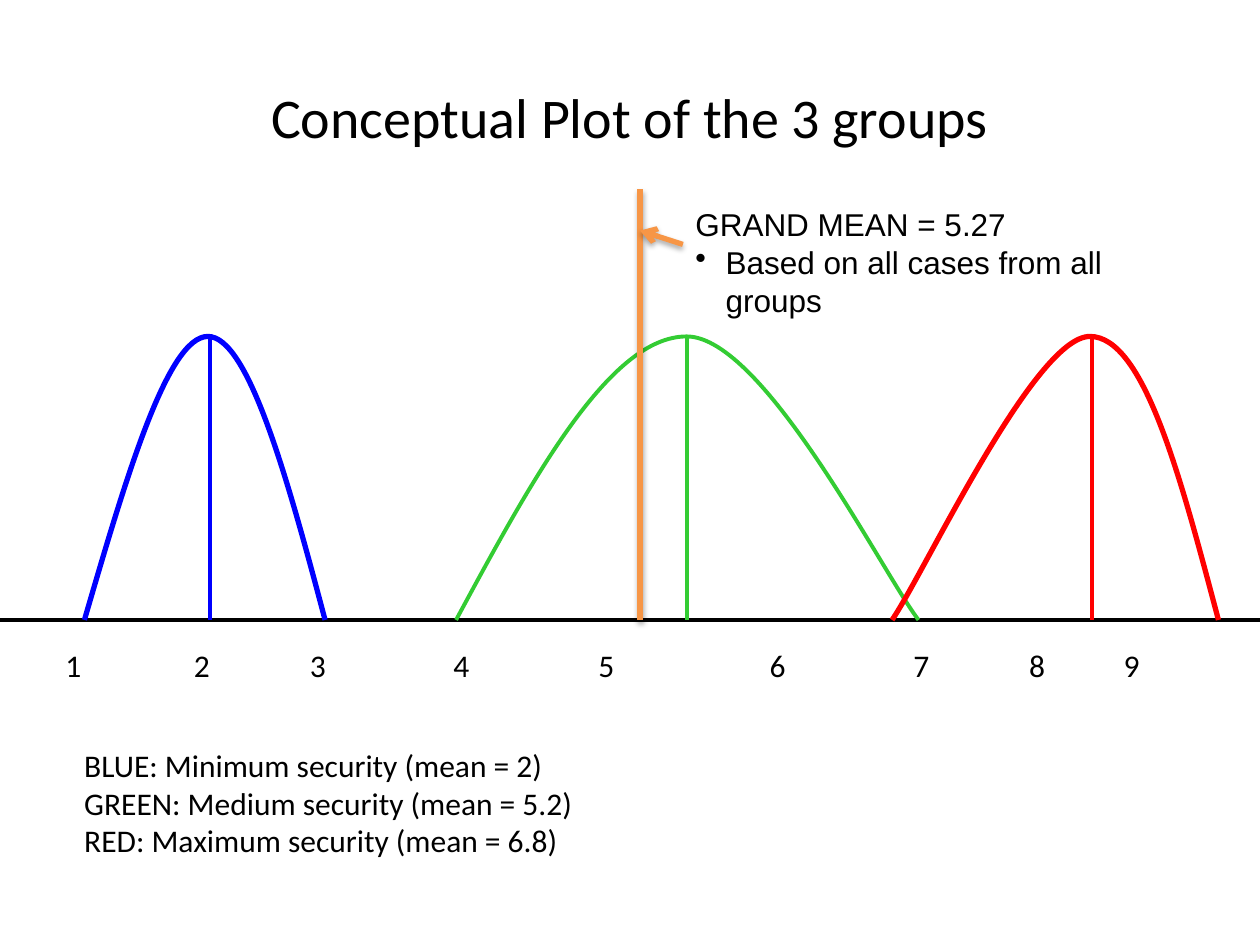
import lxml.etree
import pptx
import pptx.dml.color
import pptx.enum.shapes
import pptx.enum.text
import pptx.oxml
import pptx.oxml.ns
import pptx.util

Inches = pptx.util.Inches
Pt = pptx.util.Pt
qn = pptx.oxml.ns.qn
NAMESPACE = pptx.oxml.ns.nsdecls("a")

BASELINE, PEAK = 4.92, 2.67
BLUE, GREEN, RED, ORANGE, BLACK = "0000FF", "33CC33", "FF0000", "F79646", "000000"


def rgb(color):
    return pptx.dml.color.RGBColor.from_string(color)


def add_line(start, end, color, width):
    line = slide.shapes.add_connector(
        pptx.enum.shapes.MSO_CONNECTOR.STRAIGHT, *map(Inches, start + end))
    line.line.color.rgb = rgb(color)
    line.line.width = Pt(width)
    effects = lxml.etree.SubElement(line._element.spPr, qn("a:effectLst"))
    return line, effects


presentation = pptx.Presentation()
presentation.slide_width = Inches(10)
presentation.slide_height = Inches(7.5)
slide = presentation.slides.add_slide(presentation.slide_layouts[5])

title = slide.shapes.title
title.left, title.top, title.width, title.height = map(Inches, (0.5, 0.3, 9, 1.25))
title.text_frame.text = "Conceptual Plot of the 3 groups"
title.text_frame.vertical_anchor = pptx.enum.text.MSO_ANCHOR.MIDDLE
title_paragraph = title.text_frame.paragraphs[0]
title_paragraph.alignment = pptx.enum.text.PP_ALIGN.CENTER
title_paragraph.font.size = Pt(32)
title_paragraph.font.name = "Calibri"
title_paragraph.font.color.rgb = rgb(BLACK)

add_line((0, BASELINE), (10, BASELINE), BLACK, 2.25)
for mean, color in ((1.67, BLUE), (5.45, GREEN), (8.67, RED)):
    add_line((mean, BASELINE), (mean, PEAK), color, 2.25)

curves = [
    (GREEN, 2.25, (3.62, 4.23, 4.84, 5.45, 6.06, 7, 7.29), 4.54),
    (RED, 3, (9.67, 9.37, 9.08, 8.65, 8.21, 7.34, 7.08), 4.54),
    (BLUE, 3, (0.67, 1, 1.33, 1.65, 1.97, 2.28, 2.58), 3.79),
]
for color, width, across, last_control in curves:
    down = (BASELINE, 3.79, PEAK, PEAK, PEAK, last_control, BASELINE)
    points = [(Inches(x), Inches(y)) for x, y in zip(across, down)]
    builder = slide.shapes.build_freeform(*points[0])
    builder.add_line_segments(points[1:], close=False)
    curve = builder.convert_to_shape()
    curve.shadow.inherit = False
    curve.fill.background()
    curve.line.color.rgb = rgb(color)
    curve.line.width = Pt(width)
    outline = curve._element.find(".//" + qn("a:path"))
    segments = outline.findall(qn("a:lnTo"))
    for first in (0, 3):
        bezier = lxml.etree.SubElement(outline, qn("a:cubicBezTo"))
        for segment in segments[first:first + 3]:
            bezier.append(segment[0])
            outline.remove(segment)

grand_mean_line = add_line((5.08, BASELINE), (5.08, 1.5), ORANGE, 3)
grand_mean_arrow = add_line((5.42, 1.94), (5.08, 1.83), ORANGE, 3)
for line, effects in (grand_mean_line, grand_mean_arrow):
    effects.append(pptx.oxml.parse_xml(
        f'<a:outerShdw {NAMESPACE} blurRad="{Pt(3.1)}" dist="{Pt(1.8)}" dir="5400000" '
        f'rotWithShape="0"><a:srgbClr val="{BLACK}"><a:alpha val="35000"/></a:srgbClr>'
        '</a:outerShdw>'))
arrow_line = grand_mean_arrow[0].line._get_or_add_ln()
arrow_line.append(pptx.oxml.parse_xml(f'<a:tailEnd {NAMESPACE} type="arrow"/>'))

texts = [
    ((0.42, 5.08, 8.92, 0.4), "Calibri", ["\t".join("123456789")]),
    ((0.57, 5.87, 4.12, 1.01), "Calibri", [
        "BLUE: Minimum security (mean = 2)",
        "GREEN: Medium security (mean = 5.2)",
        "RED: Maximum security (mean = 6.8)"]),
    ((5.42, 1.58, 4.15, 0.71), "Arial", [
        "GRAND MEAN = 5.27", "Based on all cases from all groups"]),
]
frames = []
for place, font_name, lines in texts:
    frame = slide.shapes.add_textbox(*map(Inches, place)).text_frame
    frame.word_wrap = True
    frame.text = "\n".join(lines)
    for paragraph in frame.paragraphs:
        paragraph.font.size = Pt(18)
        paragraph.font.name = font_name
        paragraph.font.color.rgb = rgb(BLACK)
    frames.append(frame)
axis_frame, legend_frame, grand_mean_frame = frames

axis_properties = axis_frame.paragraphs[0]._p.get_or_add_pPr()
tab_list = pptx.oxml.parse_xml(f"<a:tabLst {NAMESPACE}/>")
for position in (1.02, 1.94, 3.08, 4.23, 5.59, 6.73, 7.65, 8.4):
    tab = lxml.etree.SubElement(tab_list, qn("a:tab"))
    tab.set("pos", str(Inches(position)))
    tab.set("algn", "l")
axis_properties.insert(0, tab_list)

bullet_properties = grand_mean_frame.paragraphs[1]._p.get_or_add_pPr()
bullet_properties.set("marL", str(Inches(0.24)))
bullet_properties.set("indent", str(-Inches(0.24)))
bullet_properties.insert(0, pptx.oxml.parse_xml(f'<a:buChar {NAMESPACE} char="•"/>'))

presentation.save("out.pptx")
